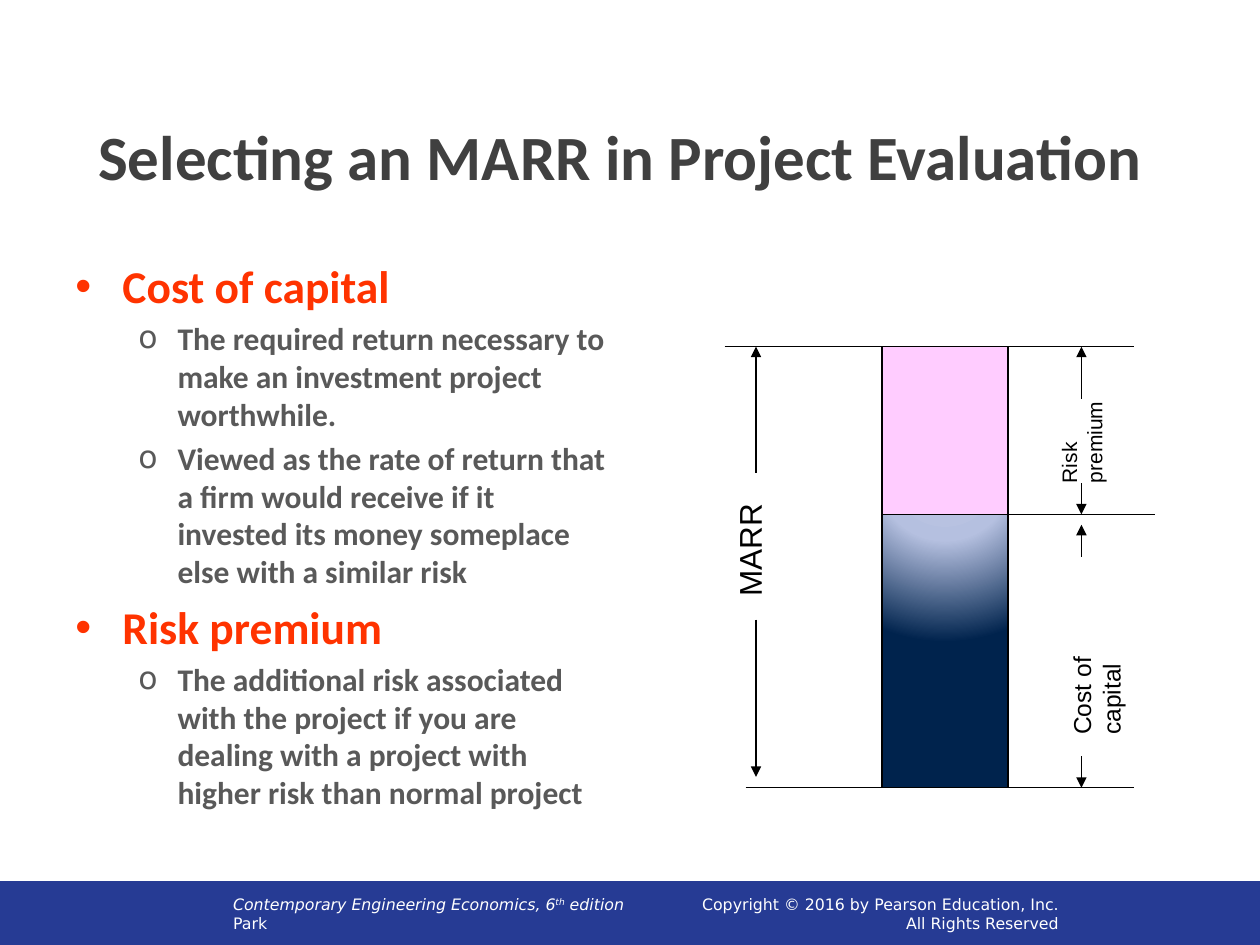
from dataclasses import dataclass

from lxml import etree
from pptx import Presentation
from pptx.dml.color import RGBColor
from pptx.enum import shapes, text
from pptx.oxml import ns
from pptx.util import Cm, Pt

COLORS = {
    "footer": "263B94", "white": "FFFFFF", "black": "000000",
    "title": "404040", "heading": "FF3300", "detail": "595959",
    "pink": "FFCCFF", "sky": "BFC9E5", "haze": "B5C0E0", "navy": "00234D",
}
FOOTER_FONT = {"name": "DejaVu Sans", "size": Pt(9)}
BODY_LEVELS = [
    {"color": "heading", "size": 26, "bullet": "•", "face": "Arial", "left": 0.95, "hang": 0.95},
    {"color": "detail", "size": 18, "bullet": "o", "face": "DejaVu Sans", "left": 2.06, "hang": 0.79},
]
BODY = [
    (0, "Cost of capital"),
    (1, "The required return necessary to make an investment project worthwhile."),
    (1, "Viewed as the rate of return that a firm would receive if it invested its money "
        "someplace else with a similar risk"),
    (0, "Risk premium"),
    (1, "The additional risk associated with the project if you are dealing with a project "
        "with higher risk than normal project"),
]
BAR_LEFT, BAR_RIGHT = 17.78, 20.32
TOP, JOINT, BOTTOM = 6.99, 10.37, 15.88
MARR_X, PARTS_X = 15.24, 21.8


@dataclass
class Line:
    x1: float
    y1: float
    x2: float
    y2: float
    arrow: bool = False


@dataclass
class SideLabel:
    lines: list[str]
    center_x: float
    bottom: float
    length: float
    depth: float
    size: int


LINES = [
    Line(14.61, TOP, 22.86, TOP),
    Line(BAR_RIGHT, JOINT, 23.28, JOINT),
    Line(15.03, BOTTOM, 22.86, BOTTOM),
    *(Line(x, start, x, end, True) for x, start, end in [
        (MARR_X, 9.53, TOP), (MARR_X, 12.49, 15.66),
        (PARTS_X, 8.04, TOP), (PARTS_X, 9.74, JOINT),
        (PARTS_X, 11.22, 10.58), (PARTS_X, 15.24, BOTTOM),
    ]),
]
LABELS = [
    SideLabel(["MARR"], 15.11, 12.27, 2.74, 1.02, 18),
    SideLabel(["Cost of capital"], PARTS_X, 15.06, 3.3, 0.84, 14),
    SideLabel(["Risk", "premium"], PARTS_X, 9.99, 2.3, 1.27, 12),
]


def color(name: str) -> RGBColor:
    return RGBColor.from_string(COLORS[name])


def apply(target, values: dict) -> None:
    for name, value in values.items():
        setattr(target, name, value)


def add_span(para, words: str, shade: str, **font):
    span = para.add_run()
    span.text = words
    apply(span.font, font)
    span.font.color.rgb = color(shade)
    return span


def add_box(page, left: float, top: float, width: float, height: float, **frame):
    box = page.shapes.add_textbox(Cm(left), Cm(top), Cm(width), Cm(height))
    apply(box.text_frame, {"word_wrap": True, "auto_size": text.MSO_AUTO_SIZE.NONE, **frame})
    return box


def add_block(page, left: float, top: float, width: float, height: float):
    block = page.shapes.add_shape(
        shapes.MSO_SHAPE.RECTANGLE, Cm(left), Cm(top), Cm(width), Cm(height))
    block.shadow.inherit = False
    block.line.width = Pt(0.75)
    return block


def fill_block(block, fill: str, outline: str) -> None:
    block.fill.solid()
    block.fill.fore_color.rgb = color(fill)
    block.line.color.rgb = color(outline)


def glow(block) -> None:
    block.fill.gradient()
    grad = block.element.spPr.find(ns.qn("a:gradFill"))
    for child in list(grad):
        grad.remove(child)
    stops = etree.SubElement(grad, ns.qn("a:gsLst"))
    for share, name in [(0, "sky"), (40, "haze"), (100, "navy")]:
        stop = etree.SubElement(stops, ns.qn("a:gs"), pos=str(share * 1000))
        etree.SubElement(stop, ns.qn("a:srgbClr"), val=COLORS[name])
    circle = etree.SubElement(grad, ns.qn("a:path"))
    circle.set("path", "circle")
    etree.SubElement(circle, ns.qn("a:fillToRect"), l="50000", t="-80000", r="50000", b="180000")


def draw_line(page, line: Line) -> None:
    connector = page.shapes.add_connector(
        shapes.MSO_CONNECTOR.STRAIGHT, Cm(line.x1), Cm(line.y1), Cm(line.x2), Cm(line.y2))
    connector.line.width = Pt(0.75)
    connector.line.color.rgb = color("black")
    properties = connector.element.spPr
    if line.arrow:
        etree.SubElement(properties.find(ns.qn("a:ln")), ns.qn("a:tailEnd"), type="triangle")
    etree.SubElement(properties, ns.qn("a:effectLst"))


def draw_label(page, label: SideLabel) -> None:
    box = add_box(page, label.center_x - label.length / 2,
                  label.bottom - (label.length + label.depth) / 2, label.length, label.depth)
    box.rotation = 270
    frame = box.text_frame
    for index, words in enumerate(label.lines):
        para = frame.add_paragraph() if index else frame.paragraphs[0]
        add_span(para, words, "black", name="Arial", size=Pt(label.size))


def draw_body(page) -> None:
    frame = add_box(page, 1.27, 5.08, 11.23, 11.94).text_frame
    for index, (level, words) in enumerate(BODY):
        style = BODY_LEVELS[level]
        para = frame.add_paragraph() if index else frame.paragraphs[0]
        para.level = level
        properties = para._p.get_or_add_pPr()
        properties.set("marL", str(Cm(style["left"])))
        properties.set("indent", str(-Cm(style["hang"])))
        etree.SubElement(properties, ns.qn("a:buFont"), typeface=style["face"])
        etree.SubElement(properties, ns.qn("a:buChar"), char=style["bullet"])
        para.space_before = Pt(style["size"] * 0.2 if index else 0)
        add_span(para, words, style["color"], name="Calibri", size=Pt(style["size"]), bold=True)


def draw_footer(page) -> None:
    fill_block(add_block(page, 0, 17.78, 25.4, 1.27), "footer", "footer")
    middle = text.MSO_ANCHOR.MIDDLE
    book = add_box(page, 4.45, 17.78, 15.65, 1.27, vertical_anchor=middle).text_frame
    para = book.paragraphs[0]
    for words, raised in [("Contemporary Engineering Economics, 6", False),
                          ("th", True), (" edition", False)]:
        span = add_span(para, words, "white", italic=True, **FOOTER_FONT)
        if raised:
            span._r.get_or_add_rPr().set("baseline", "30000")
    add_span(book.add_paragraph(), "Park", "white", **FOOTER_FONT)
    rights = add_box(page, 12.5, 17.78, 9.09, 1.27, vertical_anchor=middle).text_frame
    for para, words in [
        (rights.paragraphs[0], "Copyright © 2016 by Pearson Education, Inc."),
        (rights.add_paragraph(), "All Rights Reserved"),
    ]:
        para.alignment = text.PP_ALIGN.RIGHT
        add_span(para, words, "white", **FOOTER_FONT)


def draw_title(page) -> None:
    box = add_box(page, 1.07, 1.91, 22.86, 2.46, vertical_anchor=text.MSO_ANCHOR.MIDDLE)
    para = box.text_frame.paragraphs[0]
    para.alignment = text.PP_ALIGN.CENTER
    add_span(para, "Selecting an MARR in Project Evaluation", "title",
             name="Calibri", size=Pt(36), bold=True)


def main() -> None:
    deck = Presentation()
    apply(deck, {"slide_width": Cm(25.4), "slide_height": Cm(19.05)})
    page = deck.slides.add_slide(deck.slide_layouts[6])
    draw_footer(page)
    draw_title(page)
    draw_body(page)
    width = BAR_RIGHT - BAR_LEFT
    capital = add_block(page, BAR_LEFT, 9.53, width, BOTTOM - 9.53)
    glow(capital)
    capital.line.color.rgb = color("black")
    fill_block(add_block(page, BAR_LEFT, TOP, width, JOINT - TOP), "pink", "black")
    for line in LINES:
        draw_line(page, line)
    for label in LABELS:
        draw_label(page, label)
    deck.save("out.pptx")


if __name__ == "__main__":
    main()
